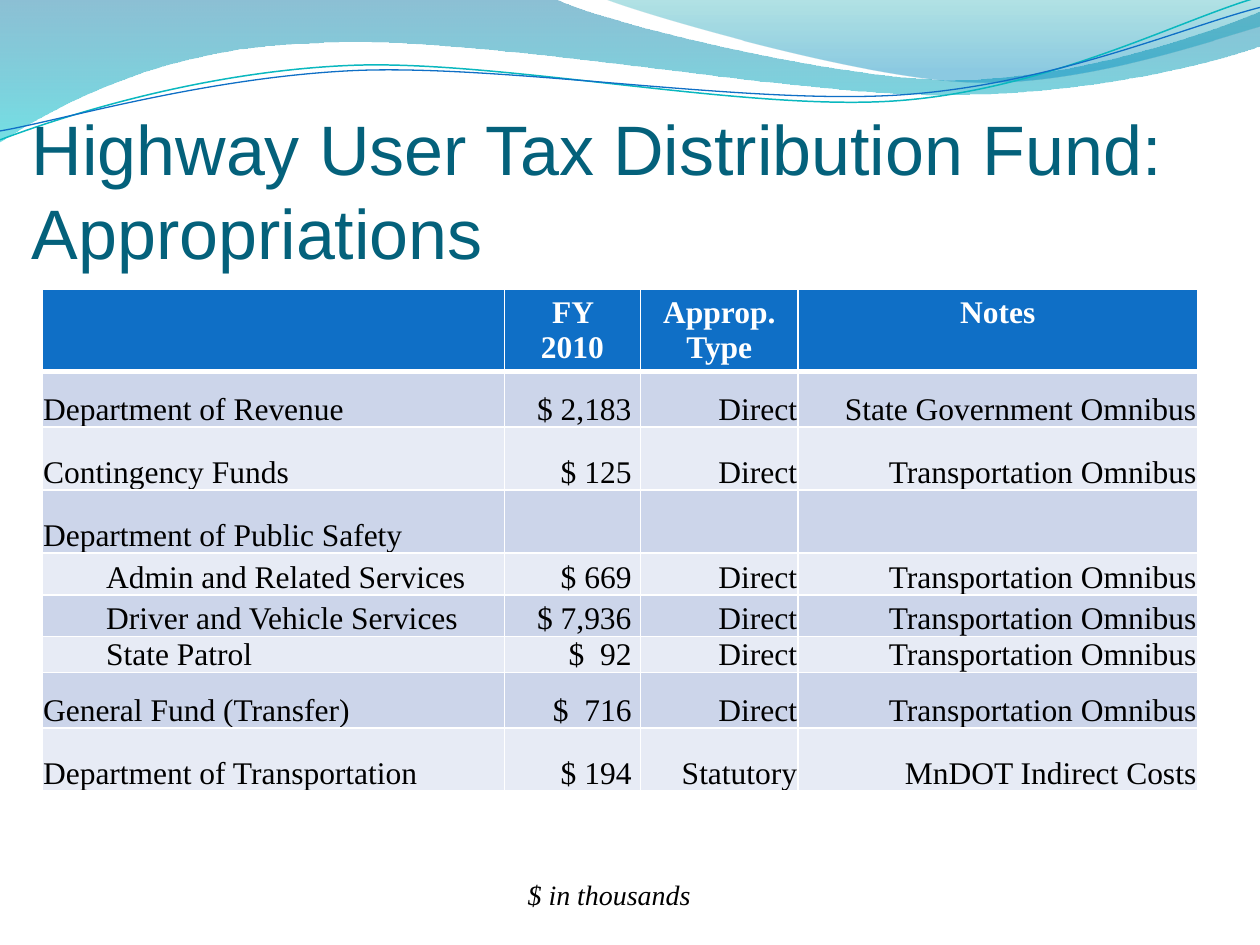
"""Build the highway fund appropriations slide."""
import math
import pptx
import pptx.util
import pptx.dml.color
import pptx.enum.text
import pptx.oxml
import pptx.oxml.ns

Cm = pptx.util.Cm
Pt = pptx.util.Pt
RGB = pptx.dml.color.RGBColor
ALIGN = pptx.enum.text.PP_ALIGN
ANCHOR = pptx.enum.text.MSO_ANCHOR
qn = pptx.oxml.ns.qn
SPACE = pptx.oxml.ns.nsdecls("a")

WHITE = RGB(0xFF, 0xFF, 0xFF)
BLACK = RGB(0, 0, 0)
BLUE = RGB(0x0F, 0x6F, 0xC6)
TEAL = RGB(0x0A, 0xB8, 0xBF)
NAVY = RGB(0x04, 0x61, 0x7B)
BANDS = RGB(0xCC, 0xD5, 0xEA), RGB(0xE7, 0xEB, 0xF5)
SERIF = "Times New Roman"

TITLE = "Highway User Tax Distribution Fund:  Appropriations"
NOTE = "$ in thousands"
HEAD = ["", "FY 2010", "Approp.\nType", "Notes"]
OMNI = "Transportation Omnibus"
ROWS = [
    (0, 1.12, "Department of Revenue", " $ 2,183 ", "Direct", "State Government Omnibus"),
    (0, 1.27, "Contingency Funds", " $ 125 ", "Direct", OMNI),
    (0, 1.27, "Department of Public Safety", "", "", ""),
    (1, 0.84, "Admin and Related Services", " $ 669 ", "Direct", OMNI),
    (1, 0.84, "Driver and Vehicle Services", " $ 7,936 ", "Direct", OMNI),
    (1, 0.64, "State Patrol", " $  92 ", "Direct", OMNI),
    (0, 1.12, "General Fund (Transfer)", " $  716 ", "Direct", OMNI),
    (0, 1.27, "Department of Transportation", " $ 194 ", "Statutory", "MnDOT Indirect Costs"),
]
COLS = [9.32, 2.74, 3.18, 8.05]
TALL = 1.19

FILLS = [
    ([(0, 0), (11.18, -0.03),
      (12.09, 0.43, 16.87, 1.6, 19.25, 1.6), (21.67, 1.6, 24.33, 0.66, 25.4, 0.23),
      (25.43, 0.91), (24.97, 1.12, 22.1, 1.93, 18.95, 1.91),
      (15.8, 1.91, 9.7, 0.71, 6.53, 0.86), (3.28, 0.91, 1.17, 2.11, -0.03, 2.87), (0, 0)],
     [(0, RGB(0x00, 0x74, 0xA1), 45), (1, RGB(0x00, 0xC6, 0xCF), 55)]),
    ([(12.17, -0.03), (12.93, 0.28, 17.32, 1.57, 19.53, 1.65),
      (21.74, 1.75, 24.41, 0.81, 25.4, 0.53), (25.4, 0), (12.17, -0.03)],
     [(0, RGB(0x00, 0xA1, 0xA9), 30), (0.8, RGB(0x00, 0x8B, 0xBF), 45)]),
]
LINES = [
    ([(0, 2.82), (1.22, 2.36, 4.01, 1.45, 7.04, 1.32),
      (10.03, 1.19, 15.06, 2.26, 18.11, 2.03), (21.16, 1.8, 23.83, 0.38, 25.35, -0.05)],
     TEAL, 0.85),
    ([(0, 2.64), (1.19, 2.44, 4.17, 1.55, 7.19, 1.42),
      (10.24, 1.3, 15.16, 2.13, 18.21, 1.91), (21.23, 1.7, 23.9, 0.53, 25.4, 0.15)],
     BLUE, 0.75),
]
TILT = 2.7
MID = 12.68, 1.48


def turn(seg):
    """Turn the points of a segment about the middle of the waves."""
    cos, sin = math.cos(math.radians(TILT)), math.sin(math.radians(TILT))
    out = []
    for x, y in zip(seg[::2], seg[1::2]):
        x, y = x - MID[0], y - MID[1]
        out += [MID[0] + x * cos - y * sin, MID[1] + x * sin + y * cos]
    return out


def draw(shapes, path, close):
    """Add one outline of straight lines and cubic curves."""
    pts = [(Cm(x), Cm(y)) for seg in path for x, y in zip(seg[::2], seg[1::2])]
    pen = shapes.build_freeform(*pts[0], scale=1.0)
    pen.add_line_segments(pts[1:], close=close)
    shape = pen.convert_to_shape()
    shape.shadow.inherit = False
    steps = iter(list(shape.element.iter(qn("a:lnTo"))))
    for seg in path[1:]:
        node = next(steps)
        if len(seg) == 6:
            node.tag
            curve = pptx.oxml.parse_xml(f"<a:cubicBezTo {SPACE}/>")
            node.addprevious(curve)
            for part in (node, next(steps), next(steps)):
                curve.append(part[0])
                part.getparent().remove(part)
    return shape


def shade(shape, stops):
    """Fill a shape from top to bottom with see-through colours."""
    shape.line.fill.background()
    shape.fill.gradient()
    shape.fill.gradient_angle = 270
    for stop, (pos, tint, alpha) in zip(shape.fill.gradient_stops, stops):
        stop.position = pos
        stop.color.rgb = tint
    for node, (pos, tint, alpha) in zip(shape.element.iter(qn("a:srgbClr")), stops):
        node.append(pptx.oxml.parse_xml(f'<a:alpha {SPACE} val="{alpha * 1000}"/>'))


def write(frame, text, size, tint, font=SERIF, align=ALIGN.LEFT, bold=False, slant=False):
    """Write text, one paragraph per line."""
    for i, line in enumerate(text.split("\n")):
        para = frame.add_paragraph() if i else frame.paragraphs[0]
        para.alignment = align
        if line:
            run = para.add_run()
            run.text = line
            face = run.font
            face.name, face.size, face.bold, face.italic = font, Pt(size), bold, slant
            face.color.rgb = tint


def paint(cell, tint, top=1, base=1):
    """Set the white borders and the fill of a cell."""
    props = cell._tc.get_or_add_tcPr()
    for side, width in zip("LRTB", (1, 1, top, base)):
        props.append(pptx.oxml.parse_xml(
            f'<a:ln{side} {SPACE} w="{Pt(width)}">'
            f'<a:solidFill><a:srgbClr val="{WHITE}"/></a:solidFill></a:ln{side}>'))
    cell.fill.solid()
    cell.fill.fore_color.rgb = tint


def fill_table(slide):
    """Add the appropriations table."""
    highs = [TALL] + [row[1] for row in ROWS]
    grid = slide.shapes.add_table(len(highs), len(COLS), Cm(0.85), Cm(5.83),
                                  Cm(sum(COLS)), Cm(sum(highs))).table
    for col, wide in zip(grid.columns, COLS):
        col.width = Cm(wide)
    for row, high in zip(grid.rows, highs):
        row.height = Cm(high)
    for c, text in enumerate(HEAD):
        cell = grid.cell(0, c)
        paint(cell, BLUE, base=3)
        write(cell.text_frame, text, 18, WHITE, align=ALIGN.CENTER, bold=True)
    for r, (level, high, *texts) in enumerate(ROWS, 1):
        for c, text in enumerate(texts):
            cell = grid.cell(r, c)
            paint(cell, BANDS[(r - 1) % 2], top=3 if r == 1 else 1)
            cell.vertical_anchor = ANCHOR.BOTTOM
            cell.margin_left = cell.margin_right = cell.margin_top = Cm(0.02)
            cell.margin_bottom = 0
            write(cell.text_frame, text, 18, BLACK, align=ALIGN.RIGHT if c else ALIGN.LEFT)
            if level and not c:
                para = cell.text_frame.paragraphs[0]
                para.level = level
                props = para._p.get_or_add_pPr()
                props.set("marL", str(Cm(1.27)))
                props.set("indent", "0")


def add_box(slide, left, top, wide, high):
    """Add a wrapping text box and return its frame."""
    frame = slide.shapes.add_textbox(Cm(left), Cm(top), Cm(wide), Cm(high)).text_frame
    frame.word_wrap = True
    return frame


def main():
    """Build and save the slide."""
    deck = pptx.Presentation()
    deck.slide_width, deck.slide_height = Cm(25.4), Cm(19.05)
    slide = deck.slides.add_slide(deck.slide_layouts[6])
    for path, stops in FILLS:
        shade(draw(slide.shapes, path, True), stops)
    group = slide.shapes.add_group_shape()
    for path, tint, width in LINES:
        wave = draw(group.shapes, [turn(seg) for seg in path], False)
        wave.rotation = 360 - TILT
        wave.fill.background()
        wave.line.color.rgb = tint
        wave.line.width = Pt(width)
    fill_table(slide)
    frame = add_box(slide, 0.64, 2.33, 24.33, 3.18)
    frame.vertical_anchor = ANCHOR.BOTTOM
    frame.margin_left = frame.margin_right = frame.margin_bottom = 0
    write(frame, TITLE, 40, NAVY, font="Arial")
    frame = add_box(slide, 6.35, 17.57, 11.86, 0.94)
    write(frame, NOTE, 16, BLACK, align=ALIGN.CENTER, slant=True)
    deck.save("out.pptx")


if __name__ == "__main__":
    main()
